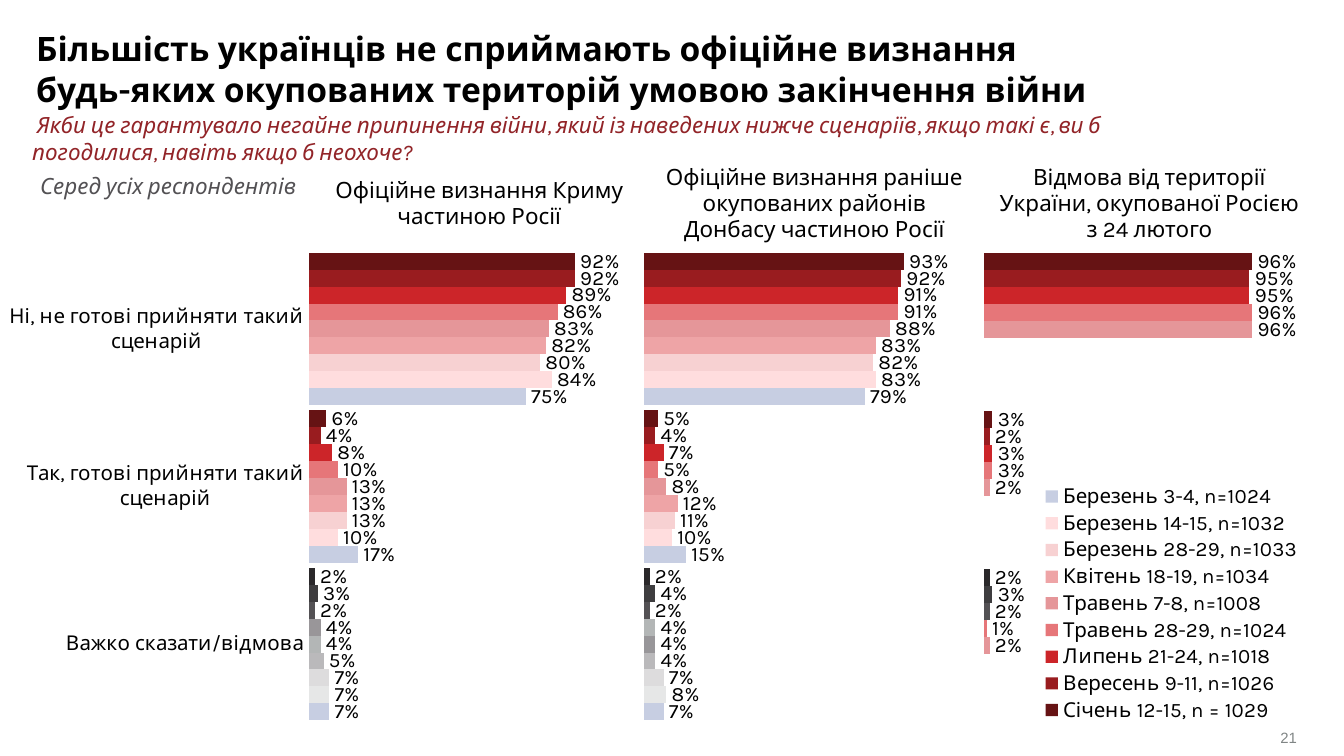
from lxml import etree
from pptx import Presentation
from pptx.chart.data import CategoryChartData
from pptx.dml.color import RGBColor
from pptx.enum.chart import XL_CHART_TYPE, XL_LABEL_POSITION, XL_LEGEND_POSITION, XL_TICK_MARK
from pptx.enum.text import MSO_ANCHOR, PP_ALIGN
from pptx.oxml.ns import qn
from pptx.util import Inches, Pt

BAR = XL_CHART_TYPE.BAR_CLUSTERED
OUTSIDE_END = XL_LABEL_POSITION.OUTSIDE_END
LEGEND_RIGHT = XL_LEGEND_POSITION.RIGHT
NO_TICKS = XL_TICK_MARK.NONE
MIDDLE = MSO_ANCHOR.MIDDLE
TOP = MSO_ANCHOR.TOP
LEFT, CENTER, RIGHT = PP_ALIGN.LEFT, PP_ALIGN.CENTER, PP_ALIGN.RIGHT

FONT = "Karla"
BLACK = "000000"
PLAIN_TABLE_STYLE = "{2D5ABB26-0587-4C30-8999-92F81FD0307C}"
WAVES = [
    ("Січень 12-15, n = 1029", "661314"),
    ("Вересень 9-11, n=1026", "991C1F"),
    ("Липень 21-24, n=1018", "CC2529"),
    ("Травень 28-29, n=1024", "E67679"),
    ("Травень 7-8, n=1008", "E59699"),
    ("Квітень 18-19, n=1034", "EEA4A6"),
    ("Березень 28-29, n=1033", "F7D1D2"),
    ("Березень 14-15, n=1032", "FFDDDE"),
    ("Березень 3-4, n=1024", "C7CEE2"),
]
ANSWERS = [
    "Ні, не готові прийняти такий сценарій",
    "Так, готові прийняти такий сценарій",
    "Важко сказати/відмова",
]
SCENARIOS = [
    "Офіційне визнання Криму частиною Росії",
    "Офіційне визнання раніше окупованих районів Донбасу частиною Росії",
    "Відмова від території України, окупованої Росією з 24 лютого",
]
CRIMEA = [
    (0.92, 0.06, 0.02), (0.92, 0.04, 0.03), (0.89, 0.08, 0.02),
    (0.86, 0.10, 0.04), (0.83, 0.13, 0.04), (0.82, 0.13, 0.05),
    (0.80, 0.13, 0.07), (0.84, 0.10, 0.07), (0.75, 0.17, 0.07),
]
DONBAS = [
    (0.93, 0.05, 0.02), (0.92, 0.04, 0.04), (0.91, 0.07, 0.02),
    (0.91, 0.05, 0.04), (0.88, 0.08, 0.04), (0.83, 0.12, 0.04),
    (0.82, 0.11, 0.07), (0.83, 0.10, 0.08), (0.79, 0.15, 0.07),
]
SINCE_FEBRUARY = [
    (0.96, 0.03, 0.02), (0.95, 0.02, 0.03), (0.95, 0.03, 0.02),
    (0.96, 0.03, 0.01), (0.96, 0.02, 0.02),
] + [(None, None, None)] * 4
DARK_GREYS = ["2A282A", "3E3D3F", "535154"]
LIGHT_GREYS = ["BAB9BB", "DDDCDD", "E6E7E7"]
CRIMEA_GREYS = DARK_GREYS + ["999699", "B3B6B6"] + LIGHT_GREYS
DONBAS_GREYS = DARK_GREYS + ["B3B6B6", "989699"] + LIGHT_GREYS


def color(value):
    """Turn a hex string into a colour."""
    return RGBColor.from_string(value)


def style_font(font, size, value, name=FONT, bold=False, italic=False):
    """Set the typeface, size, colour and style of a font."""
    font.name = name
    font.size = Pt(size)
    font.color.rgb = color(value)
    font.bold = bold
    font.italic = italic


def write(para, text, align, size, value, **style):
    """Add one styled run to an aligned paragraph."""
    para.alignment = align
    span = para.add_run()
    span.text = text
    style_font(span.font, size, value, **style)


def add_text(page, place, text, size, value, align=LEFT, anchor=TOP, inset=(0, 0), **style):
    """Add a wrapping text box with one paragraph."""
    frame = page.shapes.add_textbox(*map(Inches, place)).text_frame
    frame.word_wrap = True
    frame.vertical_anchor = anchor
    frame.margin_left = frame.margin_right = Inches(inset[0])
    frame.margin_top = frame.margin_bottom = Inches(inset[1])
    write(frame.paragraphs[0], text, align, size, value, **style)


def make_layout(x, y, width, height, inner=False):
    """Return a manual chart layout element in fractions of the chart."""
    layout = etree.Element(qn("c:layout"))
    manual = etree.SubElement(layout, qn("c:manualLayout"))
    settings = [("layoutTarget", "inner")] if inner else []
    settings += [("xMode", "edge"), ("yMode", "edge"), ("x", x), ("y", y), ("w", width), ("h", height)]
    for tag, value in settings:
        etree.SubElement(manual, qn(f"c:{tag}")).set("val", str(value))
    return layout


def style_series(series, value, grey):
    """Colour a wave, its undecided bar and its data labels."""
    series.format.fill.solid()
    series.format.fill.fore_color.rgb = color(value)
    if grey:
        fill = series.points[2].format.fill
        fill.solid()
        fill.fore_color.rgb = color(grey)
    labels = series.data_labels
    labels.show_value = True
    labels.position = OUTSIDE_END
    labels.number_format = "0%"
    labels.number_format_is_linked = False
    style_font(labels.font, 11, BLACK)


def add_bars(page, place, plot_area, values, greys, categories_shown=False):
    """Add a clustered bar chart of answers by survey wave."""
    data = CategoryChartData(number_format="0%")
    data.categories = ANSWERS if categories_shown else ["1", "2", "3"]
    for (name, _), shares in zip(WAVES, values):
        data.add_series(name, shares)
    chart = page.shapes.add_chart(BAR, *map(Inches, place), data).chart
    chart.has_title = False
    chart.has_legend = False
    style_font(chart.font, 11, BLACK)

    category_axis, value_axis = chart.category_axis, chart.value_axis
    category_axis.reverse_order = True
    category_axis.visible = categories_shown
    category_axis.major_tick_mark = NO_TICKS
    category_axis.format.line.fill.background()
    value_axis.visible = False
    value_axis.has_major_gridlines = False
    value_axis.minimum_scale, value_axis.maximum_scale = 0, 1

    plot = chart.plots[0]
    plot.gap_width = 30
    plot.overlap = 0
    plot.vary_by_categories = False
    for index, series in enumerate(plot.series):
        style_series(series, WAVES[index][1], greys[index] if index < len(greys) else None)

    area = chart._chartSpace.chart.plotArea
    for old in area.findall(qn("c:layout")):
        area.remove(old)
    area.insert(0, make_layout(*plot_area, inner=True))
    return chart


def add_legend(chart):
    """Place the wave legend over the empty lower right of the chart."""
    chart.has_legend = True
    legend = chart.legend
    legend.position = LEGEND_RIGHT
    legend.include_in_layout = True
    style_font(legend.font, 11, BLACK)
    element = legend._element
    for old in element.findall(qn("c:layout")):
        element.remove(old)
    element.find(qn("c:legendPos")).addnext(make_layout(0.63, 0.49, 0.37, 0.51))


def add_scenarios(page):
    """Add the row of scenario headings as a plain table."""
    place = map(Inches, (2.32, 1.17, 7.48, 0.7))
    table = page.shapes.add_table(1, len(SCENARIOS), *place).table
    table.first_row = False
    table.horz_banding = False
    table._tbl.tblPr.find(qn("a:tableStyleId")).text = PLAIN_TABLE_STYLE
    for cell, text in zip(table.rows[0].cells, SCENARIOS):
        cell.fill.background()
        cell.vertical_anchor = MIDDLE
        write(cell.text_frame.paragraphs[0], text, CENTER, 12, BLACK)


def main():
    """Build the slide and save the deck."""
    deck = Presentation()
    deck.slide_width = Inches(10)
    deck.slide_height = deck.slide_width * 9 // 16
    page = deck.slides.add_slide(deck.slide_layouts[6])

    add_text(page, (8.23, 5.41, 1.42, 0.16), "21", 8, "808585", RIGHT, MIDDLE, name="Arial")
    february = add_bars(page, (4.26, 1.85, 5.47, 3.54), (0.56, 0, 0.38, 1), SINCE_FEBRUARY, DARK_GREYS)
    add_legend(february)
    add_bars(page, (1.73, 1.85, 5.47, 3.54), (0.56, 0, 0.38, 1), DONBAS, DONBAS_GREYS)
    add_bars(page, (0, 1.85, 5, 3.54), (0.46, 0, 0.43, 1), CRIMEA, CRIMEA_GREYS, True)
    add_text(page, (0.24, 0.83, 8.03, 0.4),
             " Якби це гарантувало негайне припинення війни, який із наведених нижче сценаріїв, "
             "якщо такі є, ви б погодилися, навіть якщо б неохоче?", 12, "922428", italic=True)
    add_text(page, (0.2, 1.23, 2.76, 0.3), "Серед усіх респондентів", 12, "535154",
             inset=(0.1, 0.05), italic=True)
    add_scenarios(page)
    add_text(page, (0.27, 0.21, 8.03, 0.61),
             "Більшість українців не сприймають офіційне визнання "
             "будь-яких окупованих територій умовою закінчення війни", 18, BLACK, bold=True)
    deck.save("out.pptx")


if __name__ == "__main__":
    main()
